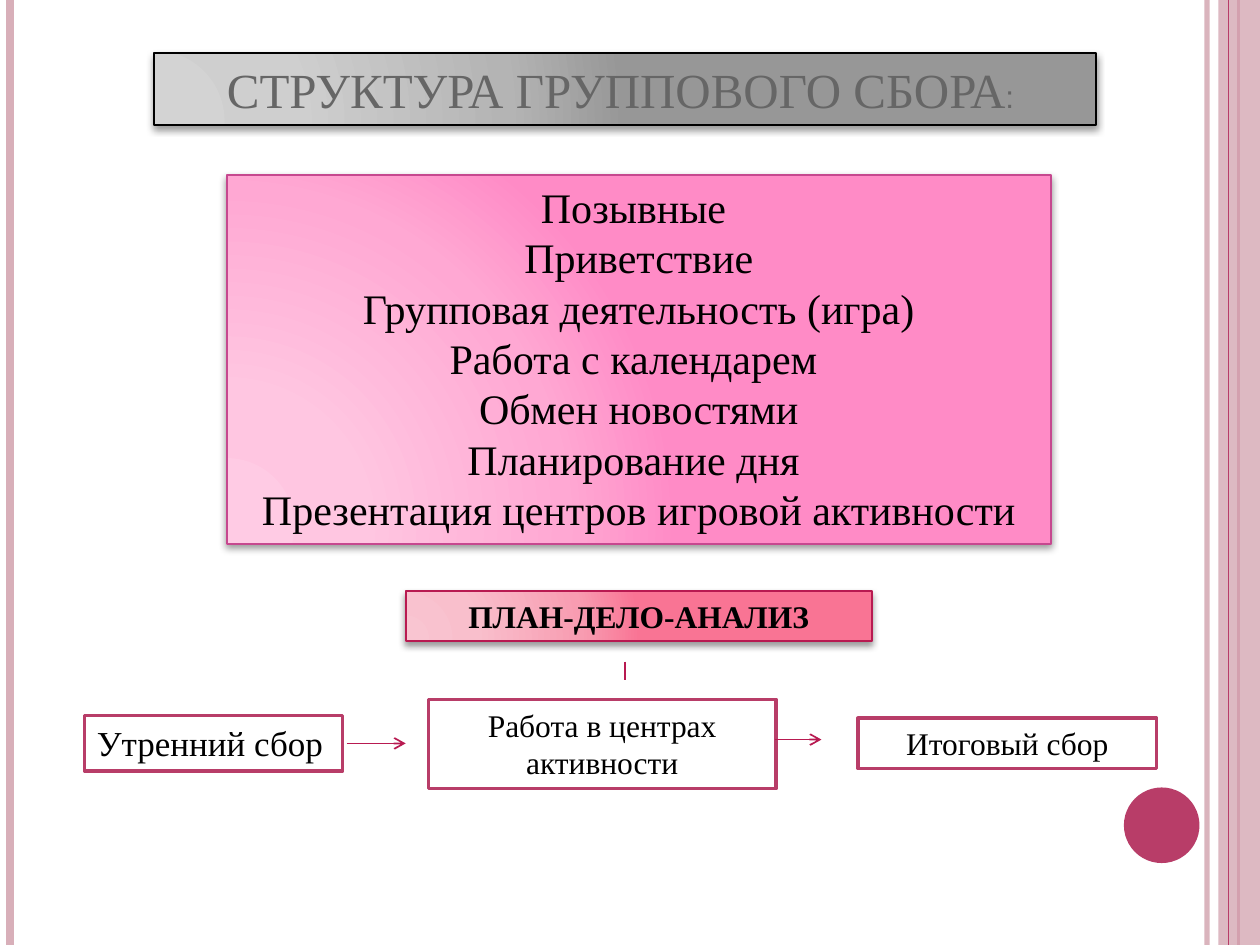
from lxml import etree
from pptx import Presentation
from pptx.dml.color import RGBColor
from pptx.enum import shapes, text
from pptx.oxml import parse_xml
from pptx.oxml.ns import nsdecls, qn
from pptx.util import Inches, Pt


def paint(target, color, alpha=100):
    target.solid()
    target.fore_color.rgb = RGBColor.from_string(color)
    if alpha < 100:
        node = target._xPr.find(".//" + qn("a:srgbClr"))
        etree.SubElement(node, qn("a:alpha"), val=str(alpha * 1000))


def draw_line(start, end, color, width, alpha=100, arrow=False):
    connector = slide.shapes.add_connector(
        shapes.MSO_CONNECTOR.STRAIGHT, *map(Inches, start + end))
    paint(connector.line.fill, color, alpha)
    connector.line.width = Pt(width)
    if arrow:
        etree.SubElement(connector.line._get_or_add_ln(), qn("a:tailEnd"), type="arrow")
    etree.SubElement(connector._element.spPr, qn("a:effectLst"))


deck = Presentation()
deck.slide_width, deck.slide_height = Inches(10), Inches(7.5)
slide = deck.slides.add_slide(deck.slide_layouts[6])

PINK, BERRY, CRIMSON = "D8AFB9", "B83D68", "B81A51"

for x, color, width, alpha in [(9.58, PINK, 3, 93), (0.08, PINK, 4.5, 100), (9.83, BERRY, 1.5, 100)]:
    draw_line((x, 0), (x, 7.5), color, width, alpha)

decorations = [
    (shapes.MSO_SHAPE.RECTANGLE, (9.67, 0, 0.33, 7.5), PINK, 87),
    (shapes.MSO_SHAPE.OVAL, (8.92, 6.25, 0.6, 0.6), BERRY, 100),
]
for preset, place, color, alpha in decorations:
    decoration = slide.shapes.add_shape(preset, *map(Inches, place))
    paint(decoration.fill, color, alpha)
    decoration.line.fill.background()
    decoration.shadow.inherit = False
draw_line((9.75, 0), (9.75, 7.5), BERRY, 0.75)

GRAY_STOPS = ["D3D3D3", "CFCFCF", "B4B4B4", "979797"]
PINK_STOPS = ["FFCBE4", "FFC6E1", "FFA8D3", "FF8BC6"]
ROSE_STOPS = ["F9C5D1", "F9BFCC", "F89CB1", "F97494"]
STEPS = [
    "Позывные ",
    "Приветствие",
    "Групповая деятельность (игра)",
    "Работа с календарем ",
    "Обмен новостями",
    "Планирование дня ",
    "Презентация центров игровой активности",
]

boxes = [
    ((1.22, 0.42, 7.48, 0.57), GRAY_STOPS, "000000", 1, ["СТРУКТУРА ГРУППОВОГО СБОРА"],
     {"size": Pt(28)}, "666666"),
    ((1.8, 1.39, 6.54, 2.93), PINK_STOPS, "C6488F", 1, STEPS, {"size": Pt(24)}, "000000"),
    ((0.67, 5.68, 2.05, 0.44), None, BERRY, 2, ["Утренний сбор"], {"size": Pt(20)}, "000000"),
    ((3.4, 5.55, 2.76, 0.71), None, BERRY, 2, ["Работа в центрах активности"],
     {"size": Pt(18)}, "000000"),
    ((6.81, 5.7, 2.37, 0.4), None, BERRY, 2, ["Итоговый сбор"], {"size": Pt(18)}, "000000"),
    ((3.22, 4.69, 3.7, 0.4), ROSE_STOPS, CRIMSON, 1, ["ПЛАН-ДЕЛО-АНАЛИЗ"],
     {"size": Pt(18), "bold": True}, "000000"),
]
frames = []
for place, stops, outline, width, lines, style, color in boxes:
    box = slide.shapes.add_shape(shapes.MSO_SHAPE.RECTANGLE, *map(Inches, place))
    paint(box.fill, "FFFFFF")
    paint(box.line.fill, outline)
    box.line.width = Pt(width)
    box.shadow.inherit = False
    if stops:
        properties = box._element.spPr
        stop_xml = "".join(
            f'<a:gs pos="{position * 1000}"><a:srgbClr val="{stop}"/></a:gs>'
            for position, stop in zip((0, 30, 75, 100), stops))
        properties.replace(properties.find(qn("a:solidFill")), parse_xml(
            f'<a:gradFill {nsdecls("a")} rotWithShape="1"><a:gsLst>{stop_xml}</a:gsLst>'
            '<a:path path="circle"><a:fillToRect l="5000" t="100000" r="120000" b="10000"/>'
            '</a:path></a:gradFill>'))
        properties.find(qn("a:effectLst")).append(parse_xml(
            f'<a:outerShdw {nsdecls("a")} blurRad="{Pt(4)}" dist="{Pt(2)}" dir="5400000" '
            'rotWithShape="0"><a:srgbClr val="000000"><a:alpha val="40000"/></a:srgbClr>'
            '</a:outerShdw>'))
    frame = box.text_frame
    frame.text = "\n".join(lines)
    frame.word_wrap = True
    frame.auto_size = text.MSO_AUTO_SIZE.SHAPE_TO_FIT_TEXT
    frame.vertical_anchor = text.MSO_ANCHOR.TOP
    for paragraph in frame.paragraphs:
        paragraph.alignment = text.PP_ALIGN.CENTER
        font = paragraph.runs[0].font
        for key, value in {"name": "Times New Roman", **style}.items():
            setattr(font, key, value)
        paint(font.fill, color)
    frames.append(frame)

title, morning = frames[0], frames[2]
morning.paragraphs[0].alignment = text.PP_ALIGN.LEFT
colon = title.paragraphs[0].add_run()
colon.text = ": "
for key, value in {"name": "Arial", "size": Pt(18)}.items():
    setattr(colon.font, key, value)
paint(colon.font.fill, "666666")

for start, end, arrow in [
    ((2.75, 5.9), (3.22, 5.9), True),
    ((6.15, 5.87), (6.52, 5.87), True),
    ((4.96, 5.25), (4.96, 5.4), False),
]:
    draw_line(start, end, CRIMSON, 1, arrow=arrow)

deck.save("out.pptx")
